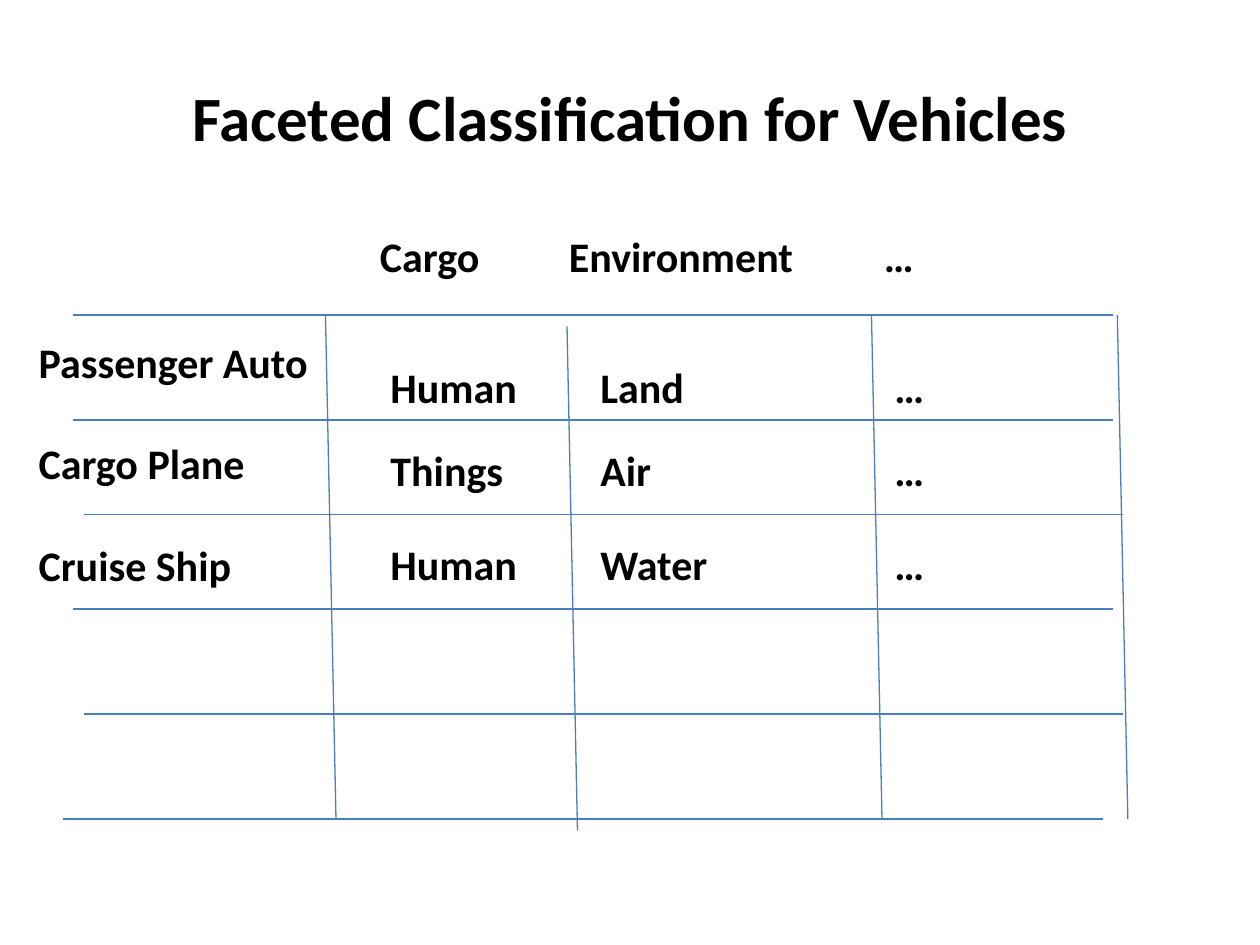
import pptx
import pptx.util
import pptx.dml.color
import pptx.enum.shapes
import pptx.enum.text
import pptx.oxml
import pptx.oxml.ns

Pt = pptx.util.Pt

# Content
HEADING = "Faceted Classification for Vehicles"
VEHICLES = ["Passenger Auto", "Cargo Plane", "Cruise Ship"]
# (left, top, tab stops, facet values)
FACET_ROWS = [
    (210, 128, (108, 288), ("Cargo", "Environment", "…")),
    (216, 203, (120, 288), ("Human", "Land", "…")),
    (216, 250.5, (120, 288), ("Things", "Air", "…")),
    (216, 304, (120, 288), ("Human", "Water", "…")),
]

# Hand-drawn grid: start point of each rule
ROW_RULES = [(42, 180), (42, 240), (48, 294), (42, 348), (48, 408), (36, 468)]
COLUMN_RULES = [(186, 180), (324, 186.5), (498, 180), (638.5, 180)]
ROW_RUN = (594, 0)
COLUMN_RUN = (6, 288)

COLORS = {"text": "000000", "rule": "4B7EBC", "background": "FFFFFF"}
FONT = "Calibri"
TEXT_SIZE = 24
LINE_HEIGHT = 29.3


def color(name):
    return pptx.dml.color.RGBColor.from_string(COLORS[name])


def format_text(frame, size):
    for paragraph in frame.paragraphs:
        for run in paragraph.runs:
            run.font.name = FONT
            run.font.size = Pt(size)
            run.font.bold = True
            run.font.color.rgb = color("text")


def add_text(slide, left, top, width, height, text):
    frame = slide.shapes.add_textbox(Pt(left), Pt(top), Pt(width), Pt(height)).text_frame
    frame.word_wrap = True
    frame.text = text
    format_text(frame, TEXT_SIZE)
    return frame


def set_tabs(paragraph, stops):
    properties = paragraph._p.get_or_add_pPr()
    tabs = pptx.oxml.parse_xml(f"<a:tabLst {pptx.oxml.ns.nsdecls('a')}/>")
    for stop in stops:
        tab = tabs.makeelement(pptx.oxml.ns.qn("a:tab"), {"pos": str(Pt(stop)), "algn": "l"})
        tabs.append(tab)
    properties.append(tabs)


def add_rule(slide, start, run):
    x, y = start
    rule = slide.shapes.add_connector(
        pptx.enum.shapes.MSO_CONNECTOR.STRAIGHT,
        Pt(x), Pt(y), Pt(x + run[0]), Pt(y + run[1]))
    rule.line.color.rgb = color("rule")
    rule.line.width = Pt(0.75)
    rule._element.spPr.append(
        pptx.oxml.parse_xml(f"<a:effectLst {pptx.oxml.ns.nsdecls('a')}/>"))


def main():
    deck = pptx.Presentation()
    deck.slide_width, deck.slide_height = Pt(720), Pt(540)
    slide = deck.slides.add_slide(deck.slide_layouts[5])
    slide.background.fill.solid()
    slide.background.fill.fore_color.rgb = color("background")

    # Title
    title = slide.shapes.title
    title.left, title.top, title.width, title.height = Pt(36), Pt(21.6), Pt(648), Pt(90)
    title.text_frame.text = HEADING
    title.text_frame.vertical_anchor = pptx.enum.text.MSO_ANCHOR.MIDDLE
    title.text_frame.paragraphs[0].alignment = pptx.enum.text.PP_ALIGN.CENTER
    format_text(title.text_frame, 36)

    # Vehicle names, one empty line apart
    vehicles = add_text(slide, 15, 188.5, 189, 211, "\n".join(VEHICLES))
    for paragraph in vehicles.paragraphs[1:]:
        paragraph.space_before = Pt(LINE_HEIGHT)

    # Grid
    for start in ROW_RULES:
        add_rule(slide, start, ROW_RUN)
    for start in COLUMN_RULES:
        add_rule(slide, start, COLUMN_RUN)

    # Facet headings and values
    for left, top, stops, values in FACET_ROWS:
        row = add_text(slide, left, top, 480, 36, "\t".join(values))
        set_tabs(row.paragraphs[0], stops)

    deck.save("out.pptx")


if __name__ == "__main__":
    main()
